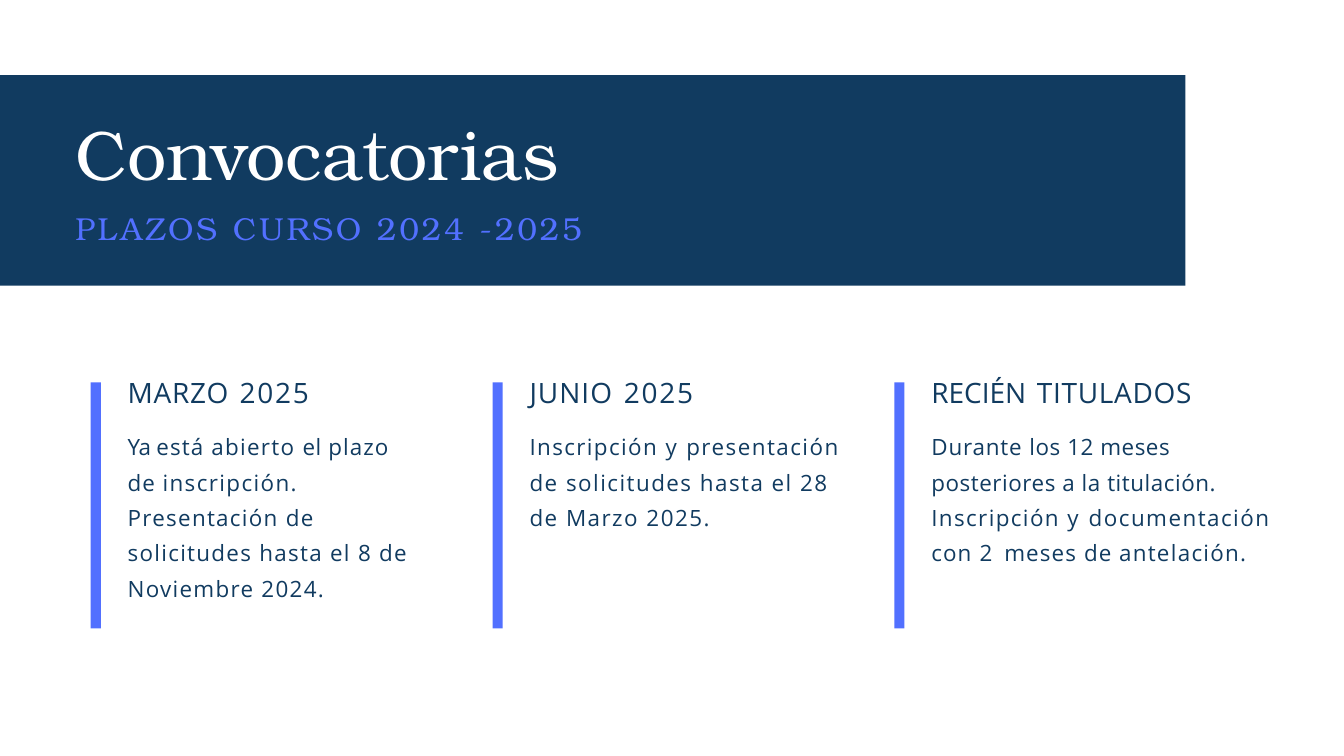
from pptx import Presentation, util as u
from pptx.dml.color import RGBColor
from pptx.enum import shapes, text

NAVY, BLUE, WHITE = "113B60", "5270FF", "FFFFFF"
SERIF, SANS = "TeX Gyre Bonum", "Open Sans"


def bar(left, top, width, height, color):
    box = slide.shapes.add_shape(
        shapes.MSO_SHAPE.RECTANGLE, *map(u.Inches, (left, top, width, height)))
    box.shadow.inherit = False
    box.fill.solid()
    box.fill.fore_color.rgb = RGBColor.from_string(color)
    box.line.fill.background()
    return box


def write(para, runs, size, color, face):
    """Add (words, letter spacing in points) runs to a paragraph."""
    para.alignment = text.PP_ALIGN.LEFT
    for words, gap in runs:
        run = para.add_run()
        run.text = words
        run.font.size = u.Pt(size)
        run.font.name = face
        run.font.color.rgb = RGBColor.from_string(color)
        run._r.get_or_add_rPr().set("spc", str(round(gap * 100)))


prs = Presentation()
prs.slide_width, prs.slide_height = u.Inches(20), u.Inches(11.25)
slide = prs.slides.add_slide(prs.slide_layouts[5])

# Banner behind the title
title = slide.shapes.title
banner = bar(0, 1.12, 17.64, 3.13, NAVY)
title._element.addprevious(banner._element)
title.left, title.top = u.Inches(1.12), u.Inches(1.14)
title.width, title.height = u.Inches(9.39), u.Inches(2.56)
frame = title.text_frame
frame.auto_size = text.MSO_AUTO_SIZE.NONE
frame.vertical_anchor = text.MSO_ANCHOR.TOP
frame.margin_left = frame.margin_right = frame.margin_bottom = 0
frame.margin_top = u.Inches(0.5)
write(frame.paragraphs[0], [("Convocatorias", 0)], 75, WHITE, SERIF)
para = frame.add_paragraph()
para.space_before = u.Pt(15.8)
write(para, [("PLAZOS CURSO 2024 -2025", 3)], 34, BLUE, SERIF)

# Columns: text width, heading runs, body paragraphs
columns = [
    (4.3, [("MARZO", 0.8), (" ", 3.5), ("2025", 1.9)], [
        [("Ya ", -0.5), ("está ", 1.2), ("abierto ", 1.4), ("el ", 0.6),
         ("plazo ", 1.2), ("de ", 1), ("inscripción.", 1.5)],
        [("Presentación de solicitudes hasta el 8 de Noviembre 2024.", 1.4)]]),
    (4.71, [("JUNIO", 1.1), (" ", 3.5), ("2025", 1.9)], [
        [("Inscripción ", 1.5), ("y ", 1.9),
         ("presentación de solicitudes hasta el 28 de Marzo 2025.", 1.6)]]),
    (5.2, [("RECIÉN", 0), (" ", 3.5), ("TITULADOS", 0.8)], [
        [("Durante ", 0.9), ("los 12 meses posteriores a la titulación. ", 0.6),
         ("Inscripción ", 1.5), ("y ", 2.2), ("documentación ", 1.6),
         ("con ", 1.2), ("2 ", 3.3), ("meses ", 1.2), ("de ", 1),
         ("antelación.", 1.4)]]),
]
for i, (width, head, body) in enumerate(columns):
    left = 1.35 + 5.98 * i
    bar(left, 5.69, 0.15, 3.66, BLUE)
    box = slide.shapes.add_textbox(
        *map(u.Inches, (left + 0.55, 5.58, width, 3.42)))
    frame = box.text_frame
    frame.word_wrap = True
    frame.margin_left = frame.margin_right = frame.margin_bottom = 0
    frame.margin_top = u.Inches(0.01)
    write(frame.paragraphs[0], head, 30, NAVY, SANS)
    for j, runs in enumerate(body):
        para = frame.add_paragraph()
        para.line_spacing = 1.32
        para.space_before = u.Pt(0 if j else 16.4)
        write(para, runs, 24, NAVY, SANS)

prs.save("out.pptx")
